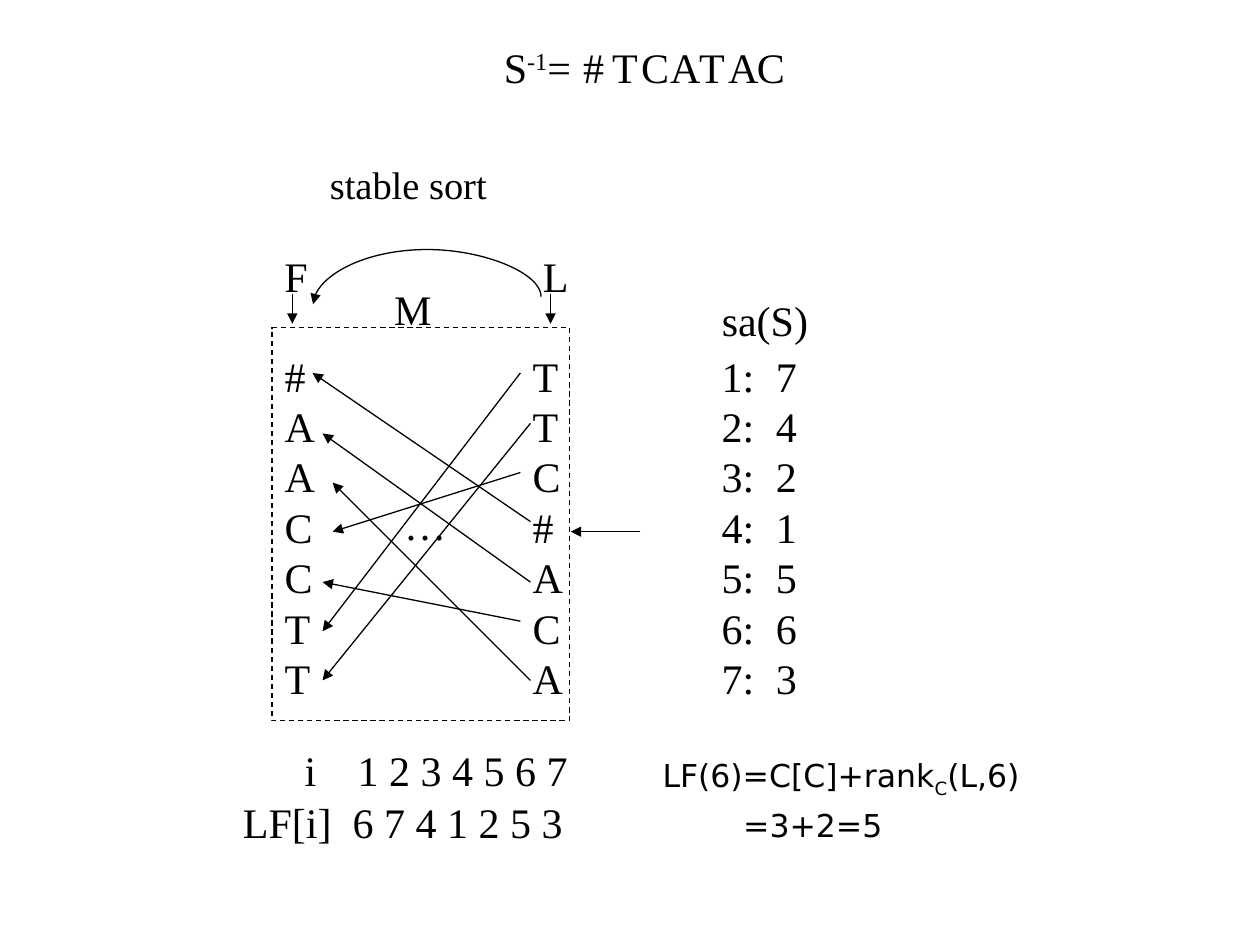
from lxml import etree
from pptx import Presentation
from pptx.dml.color import RGBColor
from pptx.enum.dml import MSO_LINE
from pptx.enum.shapes import MSO_CONNECTOR, MSO_SHAPE
from pptx.enum.text import MSO_AUTO_SIZE
from pptx.oxml.ns import qn
from pptx.util import Emu, Pt

PX = 9144
BLACK = RGBColor(0, 0, 0)
SERIF = "Times New Roman"
SANS = "DejaVu Sans"
STRAIGHT = MSO_CONNECTOR.STRAIGHT
CURVE = MSO_CONNECTOR.CURVE
RECTANGLE = MSO_SHAPE.RECTANGLE
DASH = MSO_LINE.DASH
FIT_SHAPE = MSO_AUTO_SIZE.SHAPE_TO_FIT_TEXT
ROW_STEP = 40
LINE_HEIGHT = 50

FIRST_COLUMN = "#AACCTT"
LAST_COLUMN = "TTC#ACA"
SUFFIX_ARRAY = "7421563"
REVERSED_LETTERS = "#TCATAC"
LF_ARROWS = [
    (205, 154, 32, 36),
    (197, 36, 40, 241),
    (197, 233, 40, 202),
    (205, 202, 40, 84),
    (205, 76, 40, 280),
    (205, 280, 48, 123),
    (197, 115, 48, 162),
]


def px(value):
    """Turn a length in px into EMU."""
    return Emu(value * PX)


def add_text(slide, box, runs, size=24, font=SERIF, wrap=False, shift=0, tab=None):
    """Add a text box; every second run is raised or lowered by shift percent."""
    shape = slide.shapes.add_textbox(*map(px, box))
    frame = shape.text_frame
    frame.word_wrap = wrap
    frame.auto_size = FIT_SHAPE
    frame.text = runs[0]
    for text in runs[1:]:
        frame.paragraphs[0].add_run().text = text
    for paragraph in frame.paragraphs:
        for index, run in enumerate(paragraph.runs):
            run.font.name = font
            run.font.size = Pt(size)
            run.font.color.rgb = BLACK
            if index % 2:
                run.font._element.set("baseline", str(shift * 1000))
    if tab:
        properties = frame.paragraphs[0]._p.get_or_add_pPr()
        tabs = etree.SubElement(properties, qn("a:tabLst"))
        etree.SubElement(tabs, qn("a:tab"), pos=str(px(tab)), algn="l")


def add_arrow(slide, start_x, start_y, end_x, end_y, kind=STRAIGHT):
    """Add a thin black connector with an arrowhead at its end."""
    arrow = slide.shapes.add_connector(kind, *map(px, (start_x, start_y, end_x, end_y)))
    arrow.line.color.rgb = BLACK
    arrow.line.width = Pt(0.75)
    line = arrow._element.spPr.find(qn("a:ln"))
    etree.SubElement(line, qn("a:tailEnd"), type="triangle")
    etree.SubElement(arrow._element.spPr, qn("a:effectLst"))
    return arrow


def add_title(slide, left, top):
    """Place the reversed string, one evenly spaced letter per box."""
    add_text(slide, (left, top, 76, LINE_HEIGHT), ["S", "-1", "="], shift=30)
    for index, letter in enumerate(REVERSED_LETTERS):
        add_text(slide, (left + 63 + 23 * index, top, 40, LINE_HEIGHT), [letter])


def add_sort_heading(slide, left, top):
    """Place the sort label, the column names and the curve from L to F."""
    add_text(slide, (left + 36, top, 146, 47), ["stable sort"], size=22, wrap=True)
    curve = add_arrow(slide, left + 126, top + 206, left + 120, top + 25, CURVE)
    properties = curve._element.spPr
    properties.find(qn("a:xfrm")).set("rot", "16200000")
    adjustments = properties.find(qn("a:prstGeom")).find(qn("a:avLst"))
    etree.SubElement(adjustments, qn("a:gd"), name="adj1", fmla="val -626100")
    for name, offset in (("F", 0), ("L", 205)):
        add_text(slide, (left + offset, top + 71, 40, LINE_HEIGHT), [name])
        add_arrow(slide, left + offset + 16, top + 110, left + offset + 16, top + 134)
    add_text(slide, (left + 87, top + 97, 50, LINE_HEIGHT), ["M"])


def add_matrix(slide, left, top):
    """Place the dashed matrix with its two columns and LF arrows."""
    frame = slide.shapes.add_shape(RECTANGLE, *map(px, (left, top, 236, 312)))
    frame.shadow.inherit = False
    frame.fill.background()
    frame.line.color.rgb = BLACK
    frame.line.width = Pt(0.75)
    frame.line.dash_style = DASH
    for letters, offset, width in ((FIRST_COLUMN, 0, 51), (LAST_COLUMN, 197, 44)):
        add_text(slide, (left + offset, top + 13, width, 290), ["\n".join(letters)])
    add_text(slide, (left + 95, top + 131, 53, LINE_HEIGHT), ["…"])
    for start_x, start_y, end_x, end_y in LF_ARROWS:
        add_arrow(slide, left + start_x, top + start_y, left + end_x, top + end_y)
    add_arrow(slide, left + 292, top + 162, left + 237, top + 162)


def add_suffix_array(slide, left, top):
    """Place the suffix array with its heading and row numbers."""
    add_text(slide, (left, top, 89, LINE_HEIGHT), ["sa(S)"])
    numbers = "\n".join(f"{row}:" for row in range(1, len(SUFFIX_ARRAY) + 1))
    add_text(slide, (left, top + 44, 46, 290), [numbers])
    for row, value in enumerate(SUFFIX_ARRAY):
        box = (left + 43, top + 44 + ROW_STEP * row, 37, LINE_HEIGHT)
        add_text(slide, box, [value])


def add_mapping(slide, left, top):
    """Place the index row and the LF row under the matrix."""
    add_text(slide, (left + 49, top, 229, LINE_HEIGHT), ["i\t1 2 3 4 5 6 7"], tab=42)
    add_text(slide, (left, top + 41, 274, LINE_HEIGHT), ["LF[i]\t6 7 4 1 2 5 3"], tab=87)


def add_formula(slide, left, top):
    """Place the two lines of the worked LF example."""
    runs = ["LF(6)=C[C]+rank", "C", "(L,6)"]
    add_text(slide, (left, top, 315, 40), runs, size=18, font=SANS, shift=-25)
    add_text(slide, (left + 64, top + 40, 150, 40), ["=3+2=5"], size=18, font=SANS, wrap=True)


def main():
    """Build and save the slide."""
    presentation = Presentation()
    presentation.slide_width = px(1000)
    presentation.slide_height = px(750)
    slide = presentation.slides.add_slide(presentation.slide_layouts[6])
    add_title(slide, 390, 28)
    add_sort_heading(slide, 216, 123)
    add_matrix(slide, 216, 260)
    add_suffix_array(slide, 563, 229)
    add_mapping(slide, 183, 586)
    add_formula(slide, 516, 595)
    presentation.save("out.pptx")


if __name__ == "__main__":
    main()
